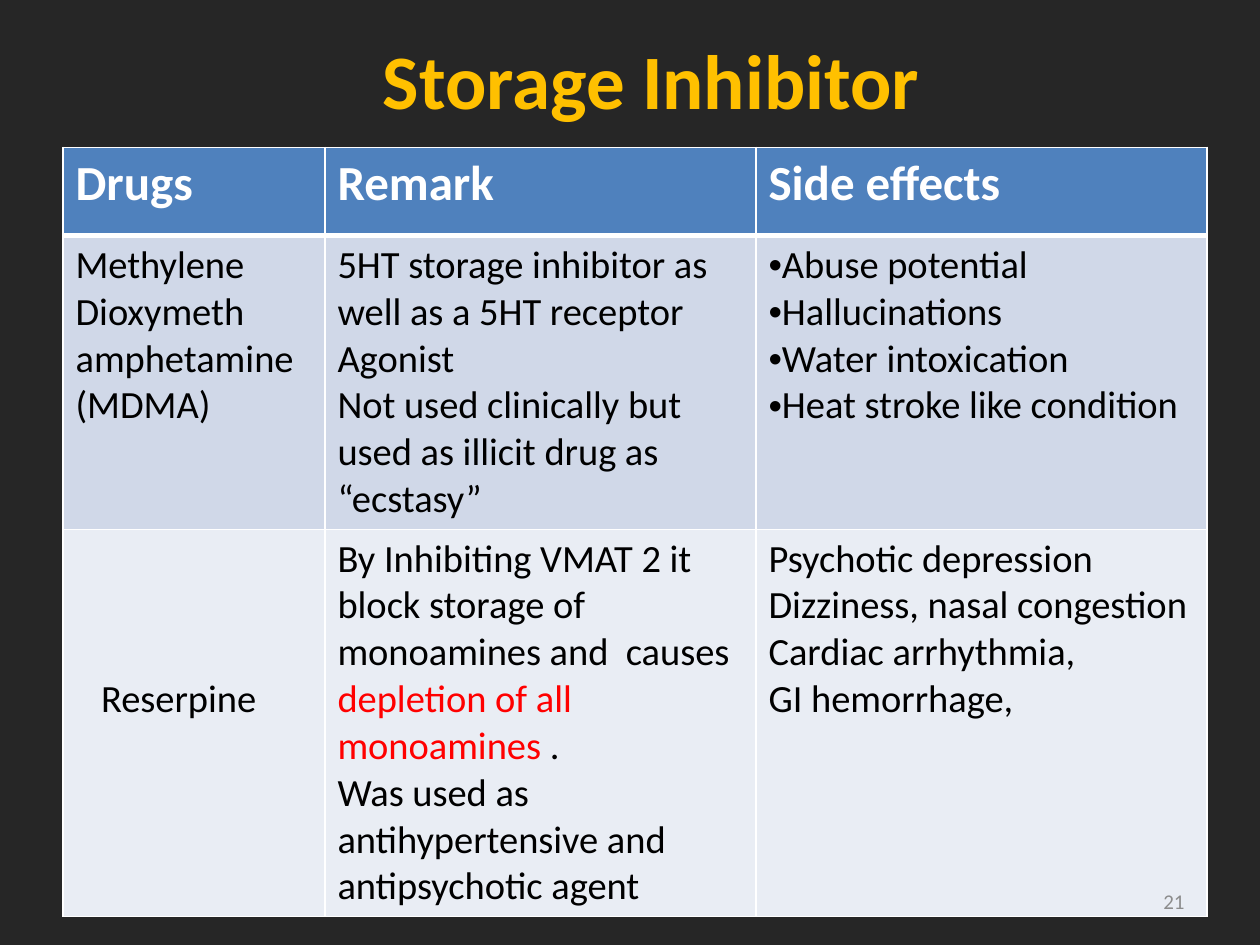
from lxml.etree import SubElement
from pptx import Presentation
from pptx.dml.color import RGBColor
from pptx.enum.text import MSO_ANCHOR, PP_ALIGN
from pptx.oxml import parse_xml
from pptx.oxml.ns import nsdecls, qn
from pptx.util import Cm, Pt

DARK = RGBColor(0x26, 0x26, 0x26)
GOLD = RGBColor(0xFF, 0xC0, 0x00)
WHITE = RGBColor(0xFF, 0xFF, 0xFF)
BLACK = RGBColor(0, 0, 0)
RED = RGBColor(0xFF, 0, 0)
GREY = RGBColor(0x8C, 0x8C, 0x8C)
FILLS = [RGBColor(0x4F, 0x81, 0xBD), RGBColor(0xD0, 0xD8, 0xE8),
         RGBColor(0xE9, 0xED, 0xF4)]

# Each cell is a list of paragraphs; text between bars is red
ROWS = [
    [["Drugs"], ["Remark"], ["Side effects"]],
    [["Methylene", "Dioxymeth", "amphetamine", "(MDMA)"],
     ["5HT storage inhibitor as well as a 5HT receptor Agonist",
      "Not used clinically but used as illicit drug as “ecstasy”"],
     ["Abuse potential", "Hallucinations", "Water intoxication",
      "Heat stroke like condition"]],
    [["Reserpine"],
     ["By Inhibiting VMAT 2 it block storage of monoamines and  causes "
      "|depletion of all monoamines| .",
      "Was used as antihypertensive and antipsychotic agent"],
     ["Psychotic depression", "Dizziness, nasal congestion",
      "Cardiac arrhythmia,", "GI hemorrhage,"]],
]
WIDTHS = [5.28, 8.69, 9.09]
HEIGHTS = [1.78, 5.31, 6.55]


def style(run, size, color, bold=False):
    run.font.name = "Calibri"
    run.font.size = Pt(size)
    run.font.bold = bold
    run.font.color.rgb = color


def border(cell, top, bottom):
    props = cell._tc.get_or_add_tcPr()
    sides = [("L", 1), ("R", 1), ("T", top), ("B", bottom)]
    for spot, (side, width) in enumerate(sides):
        props.insert(spot, parse_xml(
            f'<a:ln{side} {nsdecls("a")} w="{Pt(width)}"><a:solidFill>'
            f'<a:srgbClr val="{WHITE}"/></a:solidFill></a:ln{side}>'))


deck = Presentation()
deck.slide_width, deck.slide_height = Cm(25.4), Cm(19.05)
slide = deck.slides.add_slide(deck.slide_layouts[5])
slide.background.fill.solid()
slide.background.fill.fore_color.rgb = DARK

# Title
title = slide.shapes.title
title.left, title.top, title.width, title.height = (
    Cm(1.7), Cm(0), Cm(22.86), Cm(3.18))
title.text_frame.text = "Storage Inhibitor"
title.text_frame.vertical_anchor = MSO_ANCHOR.MIDDLE
para = title.text_frame.paragraphs[0]
para.alignment = PP_ALIGN.CENTER
style(para.runs[0], 44, GOLD, True)

# Drug table
table = slide.shapes.add_table(
    3, 3, Cm(1.27), Cm(2.97), Cm(sum(WIDTHS)), Cm(sum(HEIGHTS))).table
for col, width in zip(table.columns, WIDTHS):
    col.width = Cm(width)
for row, height in zip(table.rows, HEIGHTS):
    row.height = Cm(height)

for r, row in enumerate(ROWS):
    head = r == 0
    for c, lines in enumerate(row):
        cell = table.cell(r, c)
        cell.fill.solid()
        cell.fill.fore_color.rgb = FILLS[r]
        border(cell, 3 if r == 1 else 1, 3 if head else 1)
        frame = cell.text_frame
        for n, line in enumerate(lines):
            para = frame.add_paragraph() if n else frame.paragraphs[0]
            for i, piece in enumerate(line.split("|")):
                run = para.add_run()
                run.text = piece
                color = WHITE if head else RED if i == 1 else BLACK
                style(run, 28 if head else 22, color, head)

# Bullets for the first list of side effects
for para in table.cell(1, 2).text_frame.paragraphs:
    props = para._p.get_or_add_pPr()
    props.set("marL", "0")
    props.set("indent", "0")
    SubElement(props, qn("a:buFont")).set("typeface", "Arial")
    SubElement(props, qn("a:buChar")).set("char", "•")

# Reserpine sits lower and further in
cell = table.cell(2, 0)
cell.margin_top, cell.margin_left = Cm(2.96), Cm(0.77)

# Slide number
box = slide.shapes.add_textbox(Cm(18.2), Cm(17.66), Cm(5.93), Cm(1.01))
box.text_frame.word_wrap = True
box.text_frame.vertical_anchor = MSO_ANCHOR.MIDDLE
box.text_frame.text = "21"
para = box.text_frame.paragraphs[0]
para.alignment = PP_ALIGN.RIGHT
style(para.runs[0], 12, GREY)

deck.save("out.pptx")
